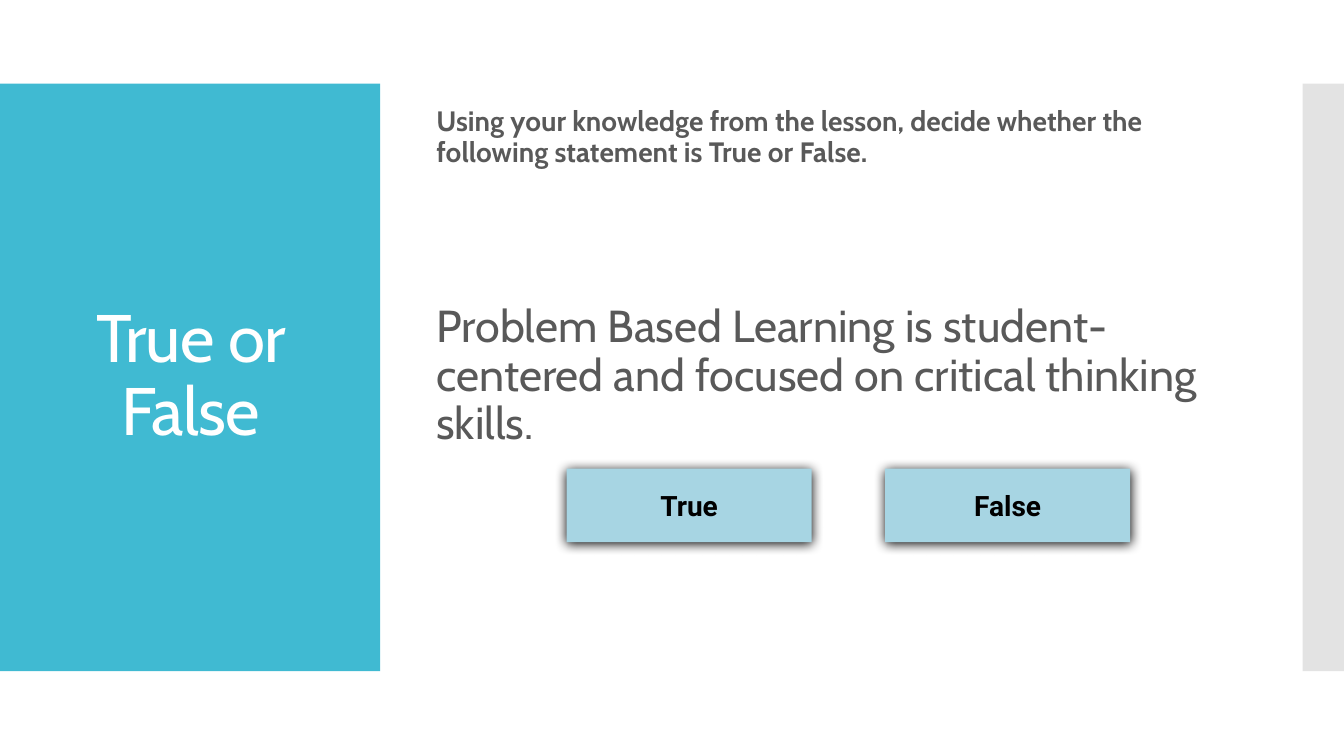
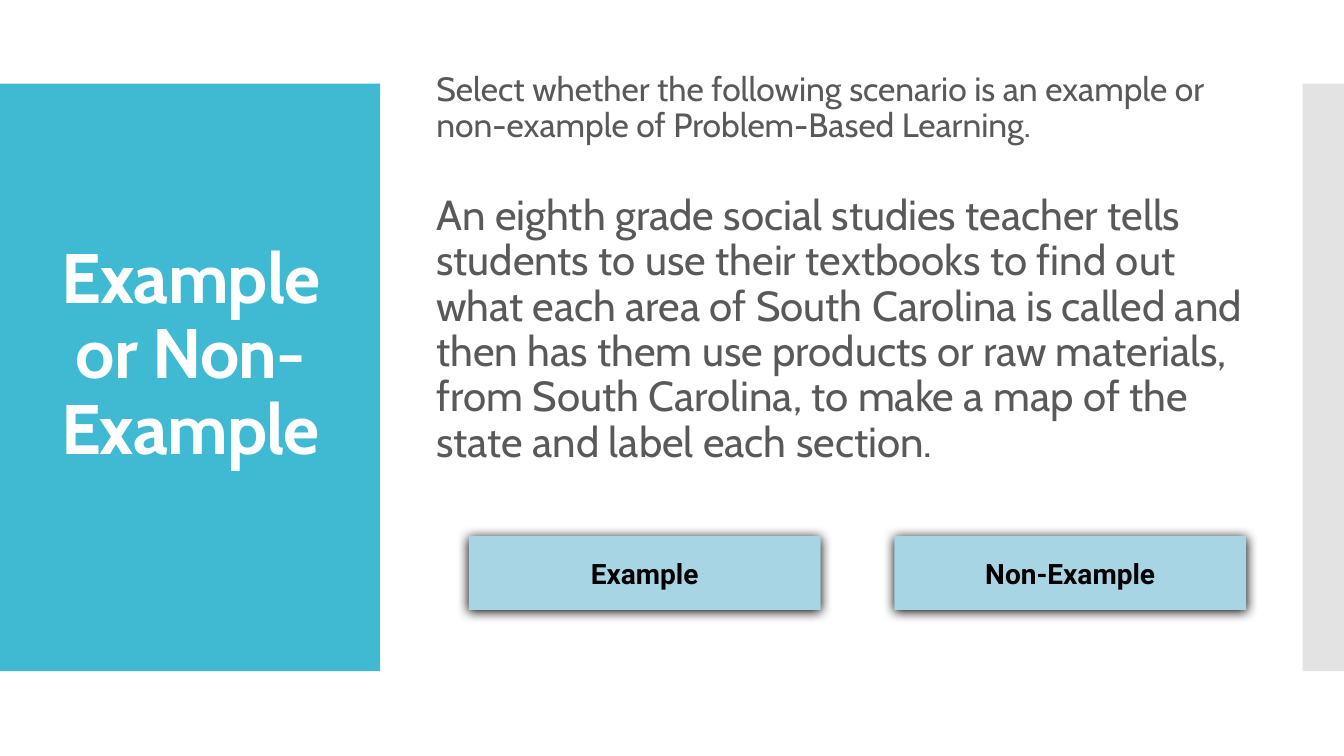
"""Builds two quiz slides with a title band, a question and two answer buttons."""
from lxml import etree
from pptx import Presentation
from pptx.dml.color import RGBColor
from pptx.enum import shapes, text
from pptx.oxml.ns import qn
from pptx.util import Inches, Pt

TEAL, GREY, PALE, INK = "40BAD2", "C8C8C8", "A7D5E3", "595959"
WHITE, BLACK = "FFFFFF", "000000"
HEAD, LABEL = "Cabin", "Roboto"
GAP = 0.73

SLIDES = [
    {
        "title": "True or False", "size": 48, "bold": False, "top": 1.23,
        "box": (4.23, 1.02, 8, 4),
        "body": [
            ("Using your knowledge from the lesson, decide whether the "
             "following statement is True or False.", 20, True, 0),
            ("Problem Based Learning is student-centered and focused on "
             "critical thinking skills.", 32, False, 97),
        ],
        "keys": ["True", "False"], "start": (5.62, 4.65), "width": 2.43,
    },
    {
        "title": "Example or Non-Example", "size": 50, "bold": True, "top": 1.02,
        "box": (4.23, 0.67, 8.47, 4.5),
        "body": [
            ("Select whether the following scenario is an example or "
             "non-example of Problem-Based Learning.", 24, False, 0),
            ("An eighth grade social studies teacher tells students to use "
             "their textbooks to find out what each area of South Carolina is "
             "called and then has them use products or raw materials, from "
             "South Carolina, to make a map of the state and label each "
             "section.", 30, False, 35),
        ],
        "keys": ["Example", "Non-Example"], "start": (4.65, 5.32), "width": 3.49,
    },
]


def color(code):
    return RGBColor.from_string(code)


def place(shape, *box):
    shape.left, shape.top, shape.width, shape.height = map(Inches, box)


def style(para, face, size, code, bold):
    for run in para.runs:
        font = run.font
        font.name, font.size, font.bold = face, Pt(size), bold
        font.color.rgb = color(code)


def rect(slide, box, code):
    shape = slide.shapes.add_shape(shapes.MSO_SHAPE.RECTANGLE, *map(Inches, box))
    shape.fill.solid()
    shape.fill.fore_color.rgb = color(code)
    shape.line.fill.background()
    shape.shadow.inherit = False
    return shape


def bands(slide):
    tree = slide.shapes._spTree
    left = rect(slide, (0, 0.83, 3.77, 5.83), TEAL)
    right = rect(slide, (12.92, 0.83, 0.42, 5.83), GREY)
    tint = right._element.spPr.find(qn("a:solidFill"))[0]
    etree.SubElement(tint, qn("a:alpha"), val="50000")
    for band in (right, left):
        tree.insert(2, band._element)


def title(slide, item):
    shape = slide.shapes.title
    place(shape, 0.28, item["top"], 3.22, 5.03)
    frame = shape.text_frame
    frame.text = item["title"]
    frame.word_wrap = True
    frame.auto_size = text.MSO_AUTO_SIZE.NONE
    frame.vertical_anchor = text.MSO_ANCHOR.MIDDLE
    para = frame.paragraphs[0]
    para.alignment = text.PP_ALIGN.CENTER
    para.line_spacing = 0.9
    style(para, HEAD, item["size"], WHITE, item["bold"])
    para.runs[0].font._element.set("spc", "-60")


def body(slide, item):
    frame = slide.shapes.add_textbox(*map(Inches, item["box"])).text_frame
    frame.word_wrap = True
    for i, (words, size, bold, space) in enumerate(item["body"]):
        para = frame.add_paragraph() if i else frame.paragraphs[0]
        para.text = words
        para.line_spacing = 0.9
        para.space_before = Pt(space)
        style(para, HEAD, size, INK, bold)


def button(slide, box, label):
    shape = rect(slide, box, PALE)
    glow = etree.SubElement(
        shape._element.spPr.find(qn("a:effectLst")), qn("a:outerShdw"),
        blurRad=str(Pt(8.5)), dist=str(Pt(1)), dir="5400000",
        algn="ctr", rotWithShape="0")
    etree.SubElement(glow, qn("a:srgbClr"), val=BLACK)
    frame = shape.text_frame
    frame.text = label
    frame.vertical_anchor = text.MSO_ANCHOR.MIDDLE
    para = frame.paragraphs[0]
    para.alignment = text.PP_ALIGN.CENTER
    style(para, LABEL, 20, BLACK, True)


def main():
    deck = Presentation()
    deck.slide_width, deck.slide_height = Inches(13.33), Inches(7.5)
    for item in SLIDES:
        slide = deck.slides.add_slide(deck.slide_layouts[5])
        bands(slide)
        title(slide, item)
        body(slide, item)
        (left, top), width = item["start"], item["width"]
        for i, label in enumerate(item["keys"]):
            button(slide, (left + i * (width + GAP), top, width, 0.73), label)
    deck.save("out.pptx")


if __name__ == "__main__":
    main()
